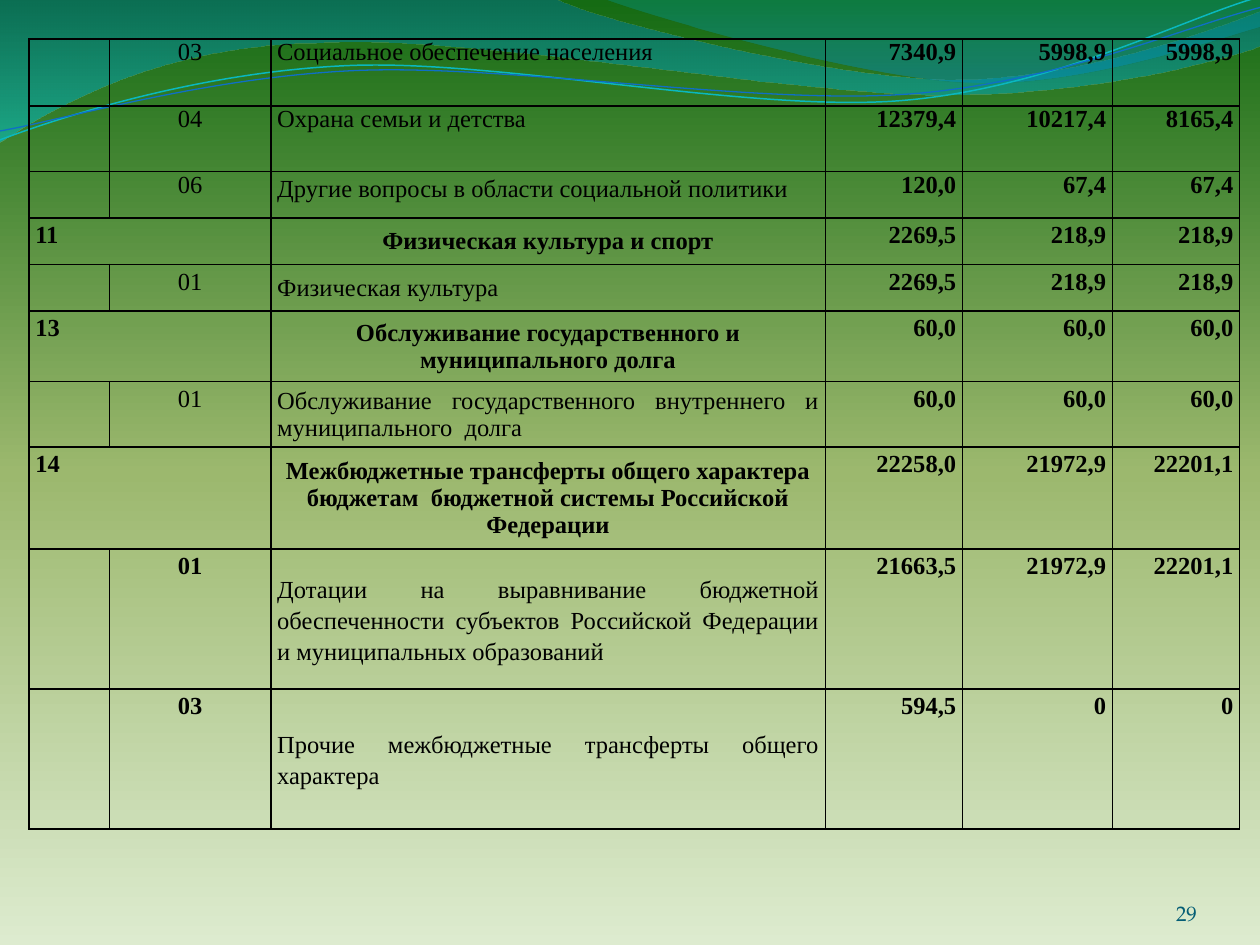
from dataclasses import dataclass
from itertools import chain
from math import cos, radians, sin
from typing import NamedTuple, Optional

from lxml.etree import SubElement
from pptx import Presentation
from pptx.dml.color import RGBColor
from pptx.enum.text import MSO_ANCHOR, PP_ALIGN
from pptx.oxml import parse_xml
from pptx.oxml.ns import nsdecls, qn
from pptx.util import Inches, Pt

COLORS = {
    "text": "000000", "border": "000000", "page": "045D75",
    "pale": "DDEBCF", "olive": "9CB86E", "forest": "156B13",
    "deep": "0074A1", "aqua": "00C6CF", "teal": "00A1A9", "sea": "008BBF",
    "cyan": "0AB8BF", "blue": "0F6FC6",
}
TABLE_FONT = "Times New Roman"
PAGE_FONT = "TeX Gyre Pagella"
TILT = 357.3


class Stop(NamedTuple):
    position: int
    color: str
    opacity: int = 100


@dataclass(frozen=True)
class Wave:
    start: tuple
    segments: tuple
    stops: tuple = ()
    line: str = ""
    width: float = 0
    pivot: tuple = ()


@dataclass(frozen=True)
class BudgetRow:
    height: float
    section: str
    subsection: str
    title: str
    amounts: tuple
    bold_code: bool = False
    loose_title: bool = False
    loose_rest: bool = True
    title_anchor: MSO_ANCHOR = MSO_ANCHOR.MIDDLE


WAVES = (
    Wave((0, -0.01), (
        (4.4, -0.01), (4.76, 0.17, 6.64, 0.63, 7.58, 0.63),
        (8.53, 0.63, 9.58, 0.26, 10, 0.09), (10.01, 0.36),
        (9.83, 0.44, 8.7, 0.76, 7.46, 0.75), (6.22, 0.75, 3.82, 0.28, 2.57, 0.34),
        (1.29, 0.35, 0.46, 0.83, -0.01, 1.13), (0, -0.01)),
        stops=(Stop(0, "deep", 45), Stop(100, "aqua", 55))),
    Wave((4.79, -0.01), (
        (5.09, 0.11, 6.82, 0.62, 7.69, 0.65), (8.56, 0.69, 9.61, 0.32, 10, 0.21),
        (10, 0), (4.79, -0.01)),
        stops=(Stop(0, "teal", 30), Stop(80, "sea", 45))),
    Wave((0, 1.11), (
        (0.48, 0.93, 1.58, 0.57, 2.77, 0.52), (3.95, 0.47, 5.93, 0.89, 7.13, 0.8),
        (8.33, 0.71, 9.38, 0.15, 9.98, -0.02)),
        line="cyan", width=0.85, pivot=(4.99, 0.58)),
    Wave((0, 1.04), (
        (0.47, 0.96, 1.64, 0.61, 2.83, 0.56), (4.03, 0.51, 5.97, 0.83, 7.17, 0.75),
        (8.36, 0.67, 9.41, 0.21, 10, 0.06)),
        line="blue", width=0.75, pivot=(5, 0.59)),
)

COLUMN_WIDTHS = (0.64, 1.28, 4.4, 1.09, 1.19, 1.01)
BUDGET = (
    BudgetRow(0.53, "", "03", "Социальное обеспечение населения",
              ("7340,9", "5998,9", "5998,9"), loose_rest=False, title_anchor=MSO_ANCHOR.TOP),
    BudgetRow(0.52, "", "04", "Охрана семьи и детства",
              ("12379,4", "10217,4", "8165,4"), loose_rest=False, title_anchor=MSO_ANCHOR.TOP),
    BudgetRow(0.37, "", "06", "Другие вопросы в области социальной политики",
              ("120,0", "67,4", "67,4"), loose_title=True, loose_rest=False,
              title_anchor=MSO_ANCHOR.TOP),
    BudgetRow(0.37, "11", "", "Физическая культура и спорт", ("2269,5", "218,9", "218,9")),
    BudgetRow(0.37, "", "01", "Физическая культура", ("2269,5", "218,9", "218,9")),
    BudgetRow(0.56, "13", "", "Обслуживание государственного и муниципального долга",
              ("60,0",) * 3),
    BudgetRow(0.52, "", "01",
              "Обслуживание государственного внутреннего и муниципального  долга",
              ("60,0",) * 3),
    BudgetRow(0.81, "14", "", "Межбюджетные трансферты общего характера бюджетам  "
              "бюджетной системы Российской Федерации", ("22258,0", "21972,9", "22201,1")),
    BudgetRow(1.11, "", "01", "Дотации на выравнивание бюджетной обеспеченности субъектов "
              "Российской Федерации и муниципальных образований",
              ("21663,5", "21972,9", "22201,1"), bold_code=True, loose_title=True),
    BudgetRow(1.11, "", "03", "Прочие межбюджетные трансферты общего характера",
              ("594,5", "0", "0"), bold_code=True, loose_title=True),
)


def write(frame, text: str, *, font: str = TABLE_FONT, size: float = 14,
          color: str = "text", bold: bool = False,
          align: Optional[PP_ALIGN] = None, loose: bool = False) -> None:
    paragraph = frame.paragraphs[0]
    paragraph.alignment = align
    if loose:
        paragraph.line_spacing = 1.15
        paragraph.space_after = Pt(10)
    run = paragraph.add_run()
    run.text = text
    run.font.name = font
    run.font.size = Pt(size)
    run.font.bold = bold
    run.font.color.rgb = RGBColor.from_string(COLORS[color])


def paint_gradient(fill, owner, stops: tuple, angle: float) -> None:
    fill.gradient()
    fill.gradient_angle = angle
    stop_list = next(owner.iter(qn("a:gsLst")))
    for old in list(stop_list):
        stop_list.remove(old)
    for stop in stops:
        entry = SubElement(stop_list, qn("a:gs"), pos=str(stop.position * 1000))
        tint = SubElement(entry, qn("a:srgbClr"), val=COLORS[stop.color])
        if stop.opacity < 100:
            SubElement(tint, qn("a:alpha"), val=str(stop.opacity * 1000))


def level(point: tuple, pivot: tuple) -> tuple:
    angle = radians(360 - TILT)
    x, y = point[0] - pivot[0], point[1] - pivot[1]
    return (pivot[0] + x * cos(angle) - y * sin(angle),
            pivot[1] + x * sin(angle) + y * cos(angle))


def bend(ribbon, segments: tuple) -> None:
    sides = ribbon._element.iter(qn("a:lnTo"))
    queue = iter(list(sides))
    for segment in segments:
        parts = [next(queue) for _ in range(len(segment) // 2)]
        if len(parts) == 3:
            curve = parse_xml(f'<a:cubicBezTo {nsdecls("a")}/>')
            parts[0].addprevious(curve)
            for part in parts:
                curve.append(part[0])
                part.getparent().remove(part)


def draw_wave(slide, wave: Wave) -> None:
    points = [wave.start] + [segment[i:i + 2] for segment in wave.segments
                             for i in range(0, len(segment), 2)]
    if wave.pivot:
        points = [level(point, wave.pivot) for point in points]
    points = [(Inches(x), Inches(y)) for x, y in points]
    builder = slide.shapes.build_freeform(*points[0])
    builder.add_line_segments(points[1:], close=bool(wave.stops))
    ribbon = builder.convert_to_shape()
    bend(ribbon, wave.segments)
    ribbon.shadow.inherit = False
    if wave.stops:
        paint_gradient(ribbon.fill, ribbon._element, wave.stops, 270)
        ribbon.line.fill.background()
    else:
        ribbon.rotation = TILT
        ribbon.fill.background()
        ribbon.line.color.rgb = RGBColor.from_string(COLORS[wave.line])
        ribbon.line.width = Pt(wave.width)


def prepare_cell(cell) -> None:
    cell.margin_left = cell.margin_right = Inches(0.05)
    cell.margin_top = cell.margin_bottom = 0
    cell.fill.background()
    properties = cell._tc.get_or_add_tcPr()
    for index, side in enumerate("LRTB"):
        properties.insert(index, parse_xml(
            f'<a:ln{side} {nsdecls("a")} w="{Pt(1)}"><a:solidFill>'
            f'<a:srgbClr val="{COLORS["border"]}"/></a:solidFill></a:ln{side}>'))


def fill_row(table, index: int, row: BudgetRow) -> None:
    table.rows[index].height = Inches(row.height)
    section, subsection, title, *amounts = (
        table.cell(index, column) for column in range(len(COLUMN_WIDTHS)))
    for cell in chain((section, subsection, title), amounts):
        prepare_cell(cell)
    is_section = bool(row.section)
    if is_section:
        section.merge(subsection)
        write(section.text_frame, row.section, bold=True, loose=True)
    else:
        write(subsection.text_frame, row.subsection, bold=row.bold_code,
              align=PP_ALIGN.CENTER, loose=row.loose_rest)
    title.vertical_anchor = row.title_anchor
    write(title.text_frame, row.title, bold=is_section, loose=row.loose_title,
          align=PP_ALIGN.CENTER if is_section else PP_ALIGN.JUSTIFY)
    for cell, amount in zip(amounts, row.amounts):
        write(cell.text_frame, amount, bold=True, align=PP_ALIGN.RIGHT, loose=row.loose_rest)


def draw_budget(slide) -> None:
    table = slide.shapes.add_table(
        len(BUDGET), len(COLUMN_WIDTHS), Inches(0.23), Inches(0.31),
        Inches(sum(COLUMN_WIDTHS)), Inches(sum(row.height for row in BUDGET))).table
    table.first_row = table.horz_banding = False
    for column, width in zip(table.columns, COLUMN_WIDTHS):
        column.width = Inches(width)
    for index, row in enumerate(BUDGET):
        fill_row(table, index, row)


def draw_page_number(slide, number: str) -> None:
    frame = slide.shapes.add_textbox(
        Inches(8.67), Inches(6.95), Inches(0.83), Inches(0.4)).text_frame
    frame.word_wrap = True
    frame.vertical_anchor = MSO_ANCHOR.BOTTOM
    frame.margin_left = frame.margin_right = frame.margin_top = frame.margin_bottom = 0
    write(frame, number, font=PAGE_FONT, size=12, color="page", align=PP_ALIGN.RIGHT)


def main() -> None:
    deck = Presentation()
    deck.slide_width, deck.slide_height = Inches(10), Inches(7.5)
    slide = deck.slides.add_slide(deck.slide_layouts[6])
    paint_gradient(slide.background.fill, slide._element,
                   (Stop(0, "pale"), Stop(50, "olive"), Stop(100, "forest")), 90)
    for wave in WAVES:
        draw_wave(slide, wave)
    draw_page_number(slide, "29")
    draw_budget(slide)
    deck.save("out.pptx")


if __name__ == "__main__":
    main()
